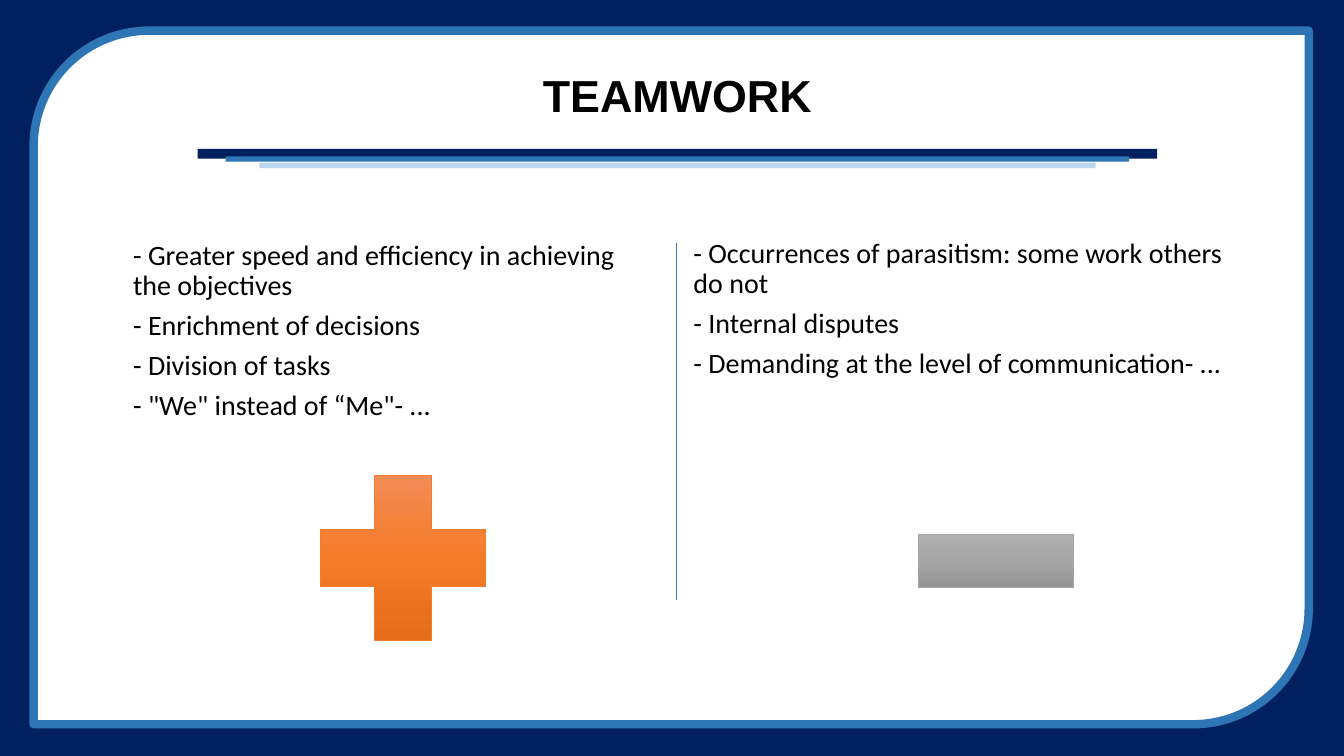
import copy

import pptx
import pptx.dml.color
import pptx.enum.shapes
import pptx.enum.text
import pptx.oxml
import pptx.oxml.ns
import pptx.util

Pt = pptx.util.Pt
SHAPE = pptx.enum.shapes.MSO_SHAPE
ALIGN = pptx.enum.text.PP_ALIGN
ANCHOR = pptx.enum.text.MSO_ANCHOR
qn = pptx.oxml.ns.qn

COLORS = {
    "navy": "002060", "blue": "2E75B6", "pale": "BDD7EE",
    "white": "FFFFFF", "black": "000000", "divider": "4472C4",
    "orange": "ED7D31", "gray": "A5A5A5",
}
GRADIENTS = {
    "orange": ["F18C57", "F67B28", "E56C19"],
    "gray": ["AFAFAF", "A5A5A5", "939393"],
}
PROS = [
    "- Greater speed and efficiency in achieving the objectives",
    "- Enrichment of decisions",
    "- Division of tasks",
    "- \"We\" instead of “Me\"- ...",
]
CONS = [
    "- Occurrences of parasitism: some work others do not",
    "- Internal disputes",
    "- Demanding at the level of communication- ...",
]


def rgb(value):
    return pptx.dml.color.RGBColor.from_string(value)


def add_box(s, kind, box, fill=None, line=None, weight=0):
    sp = s.shapes.add_shape(kind, *map(Pt, box))
    sp.shadow.inherit = False
    if fill:
        sp.fill.solid()
        sp.fill.fore_color.rgb = rgb(COLORS[fill])
    if line:
        sp.line.color.rgb = rgb(COLORS[line])
        sp.line.width = Pt(weight)
    else:
        sp.line.fill.background()
    return sp


def add_text(s, box, lines, font, size, margin, bold=False,
             align=ALIGN.LEFT, anchor=ANCHOR.TOP, after=0):
    tf = s.shapes.add_textbox(*map(Pt, box)).text_frame
    tf.word_wrap = True
    tf.vertical_anchor = anchor
    tf.margin_left = tf.margin_right = Pt(margin)
    tf.margin_top = tf.margin_bottom = Pt(margin)
    for i, line in enumerate(lines):
        p = tf.paragraphs[0] if i == 0 else tf.add_paragraph()
        p.text = line
        p.alignment = align
        p.line_spacing = 0.9
        p.space_after = Pt(after)
        p.font.name = font
        p.font.size = Pt(size)
        p.font.bold = bold
        p.font.color.rgb = rgb(COLORS["black"])


def add_frame(s, box):
    x, y, w, h = box
    add_box(s, SHAPE.RECTANGLE, box, "navy")
    add_box(s, SHAPE.ROUND_2_DIAG_RECTANGLE,
            (x + 24, y + 21.9, w - 49.2, h - 44.6), "white", "blue", 6)


def add_header(s, box, title):
    x, y, w, h = box
    bars = [("navy", 0, 71, 7), ("blue", 20, 76.4, 3.8), ("pale", 44, 80.9, 4)]
    for color, inset, top, height in bars:
        add_box(s, SHAPE.RECTANGLE, (x + inset, y + top, w - 2 * inset, height), color)
    add_text(s, (x, y, w, h), [title], "Arial", 32, 4, True,
             ALIGN.CENTER, ANCHOR.MIDDLE)


def add_column(s, box, lines):
    add_text(s, box, lines, "Calibri", 20, 2.9, after=7)


def add_sign(s, kind, box, color):
    sp = add_box(s, kind, box, line=color, weight=0.5)
    sp.fill.gradient()
    sp.fill.gradient_angle = 270
    stops = sp._element.spPr.find(qn("a:gradFill")).find(qn("a:gsLst"))
    stops.insert(1, copy.deepcopy(stops[0]))
    for i, stop in enumerate(sp.fill.gradient_stops):
        stop.position = i / 2
        stop.color.rgb = rgb(GRADIENTS[color][i])
    return sp


def add_divider(s, x, top, bottom):
    line = s.shapes.add_connector(pptx.enum.shapes.MSO_CONNECTOR.STRAIGHT,
                                  Pt(x), Pt(top), Pt(x), Pt(bottom))
    line.line.color.rgb = rgb(COLORS["divider"])
    line.line.width = Pt(1)
    line._element.spPr.append(pptx.oxml.parse_xml(
        '<a:effectLst xmlns:a="http://schemas.openxmlformats.org/drawingml/2006/main"/>'))


def add_comparison(s, box):
    x, y, w, h = box
    add_column(s, (x, y + 1.4, 366, h), PROS)
    add_column(s, (x + 400.3, y, w - 400.3, h), CONS)
    plus = add_sign(s, SHAPE.CROSS, (x + 136.8, y + 171.4, 118, 118), "orange")
    plus.adjustments[0] = 0.328
    add_sign(s, SHAPE.RECTANGLE, (x + 563.8, y + 213.8, 111, 38), "gray")
    add_divider(s, x + 391, y + 5.8, y + 260.6)


def main():
    prs = pptx.Presentation()
    prs.slide_width, prs.slide_height = Pt(960), Pt(540)
    s = prs.slides.add_slide(prs.slide_layouts[6])
    add_frame(s, (0, 0, 960, 540))
    add_header(s, (141.2, 35.3, 685.4, 69.8), "TEAMWORK")
    add_comparison(s, (92.2, 167.8, 793.4, 266.4))
    prs.save("out.pptx")


if __name__ == "__main__":
    main()
